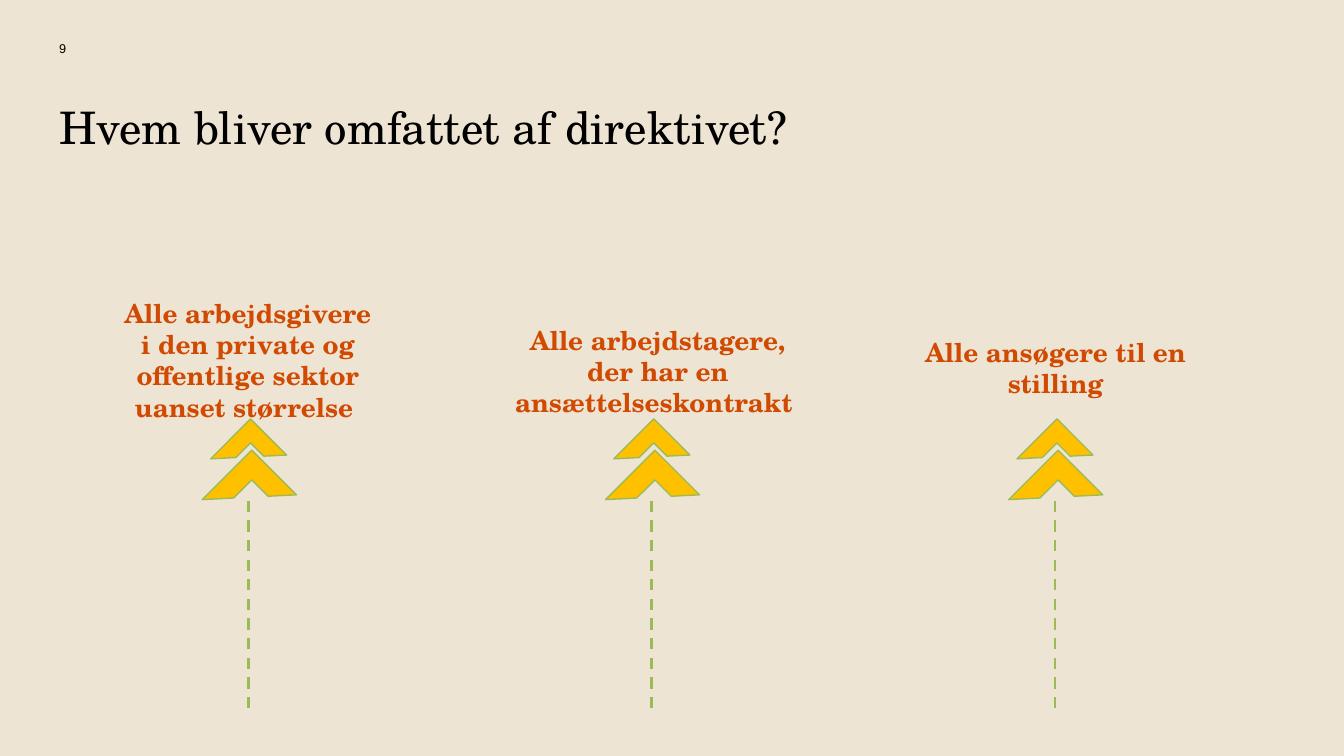
"""Build the slide on who the directive covers."""
import pptx
import pptx.util
import pptx.dml.color
import pptx.enum.dml
import pptx.enum.shapes
import pptx.enum.text
import pptx.oxml.ns
import lxml.etree
from pptx.util import Inches

HUES = {"sand": "EEE4D4", "ink": "000000", "rust": "D04A02",
        "gold": "FFC000", "green": "9BBB59"}
SERIF = "TeX Gyre Schola"
LEFT = pptx.enum.text.PP_ALIGN.LEFT
MID = pptx.enum.text.PP_ALIGN.CENTER
GROUPS = [
    (1, "Alle arbejdsgivere i den private og offentlige sektor uanset størrelse ",
     (0.87, 2.21, 1.95, 0.81)),
    (2, "Alle arbejdstagere, der har en ansættelseskontrakt ",
     (3.83, 2.41, 2.13, 0.81)),
    (3, "Alle ansøgere til en stilling", (6.88, 2.5, 1.95, 0.44)),
]


def tint(name):
    """Return the named colour."""
    return pptx.dml.color.RGBColor.from_string(HUES[name])


def place(shape, box):
    """Move and size a shape in inches."""
    shape.left, shape.top, shape.width, shape.height = map(Inches, box)


def write(shape, text, size, font, hue, align=LEFT, bold=False, after=0):
    """Put one formatted run into a shape without margins."""
    frame = shape.text_frame
    frame.word_wrap = True
    frame.auto_size = pptx.enum.text.MSO_AUTO_SIZE.NONE
    frame.vertical_anchor = pptx.enum.text.MSO_ANCHOR.TOP
    frame.margin_left = frame.margin_right = 0
    frame.margin_top = frame.margin_bottom = 0
    para = frame.paragraphs[0]
    para.alignment = align
    para.space_before = pptx.util.Pt(0)
    para.space_after = pptx.util.Pt(after)
    run = para.add_run()
    run.text = text
    run.font.size = pptx.util.Pt(size)
    run.font.name = font
    run.font.bold = bold
    run.font.color.rgb = tint(hue)
    return para


def label(holder, text, box):
    """Fill a body placeholder with a centred label and no bullet."""
    place(holder, box)
    para = write(holder, text, 14, SERIF, "rust", MID, True, 4.5)
    props = para._p.get_or_add_pPr()
    props.set("marL", "0")
    props.set("indent", "0")
    lxml.etree.SubElement(props, pptx.oxml.ns.qn("a:buNone"))


def stroke(line, width):
    """Give a line its colour and width."""
    line.color.rgb = tint("green")
    line.width = pptx.util.Pt(width)


def chevron(group, box):
    """Add an upward chevron."""
    shape = group.shapes.add_shape(
        pptx.enum.shapes.MSO_SHAPE.HALF_FRAME, *map(Inches, box))
    shape.rotation = 45
    shape.adjustments[0] = shape.adjustments[1] = 0.333
    shape.shadow.inherit = False
    shape.fill.solid()
    shape.fill.fore_color.rgb = tint("gold")
    stroke(shape.line, 0.75)


def arrow(slide, x):
    """Add a double chevron on a dashed stem at x."""
    group = slide.shapes.add_group_shape()
    chevron(group, (x - 0.23, 3.44, 0.47, 0.52))
    chevron(group, (x - 0.19, 3.19, 0.38, 0.42))
    stem = group.shapes.add_connector(
        pptx.enum.shapes.MSO_CONNECTOR.STRAIGHT,
        Inches(x), Inches(5.27), Inches(x), Inches(3.7))
    stroke(stem.line, 1.5)
    stem.line.dash_style = pptx.enum.dml.MSO_LINE.DASH
    lxml.etree.SubElement(stem._element.spPr, pptx.oxml.ns.qn("a:effectLst"))


def main():
    """Build and save the slide."""
    deck = pptx.Presentation()
    deck.slide_width, deck.slide_height = Inches(10), Inches(10 * 9 / 16)
    slide = deck.slides.add_slide(deck.slide_layouts[4])
    slide.background.fill.solid()
    slide.background.fill.fore_color.rgb = tint("sand")
    title = slide.shapes.title
    place(title, (0.44, 0.74, 9.11, 1.02))
    write(title, "Hvem bliver omfattet af direktivet?", 24, SERIF, "ink")
    page = slide.shapes.add_textbox(*map(Inches, (0.44, 0.3, 0.3, 0.15)))
    write(page, "9", 6.8, "Arial", "ink")
    holders = {item.placeholder_format.idx: item for item in slide.placeholders}
    for idx, text, box in GROUPS:
        label(holders[idx], text, box)
        arrow(slide, 1.85 + 3 * (idx - 1))
    spare = holders[4]._element
    spare.getparent().remove(spare)
    deck.save("out.pptx")


if __name__ == "__main__":
    main()
